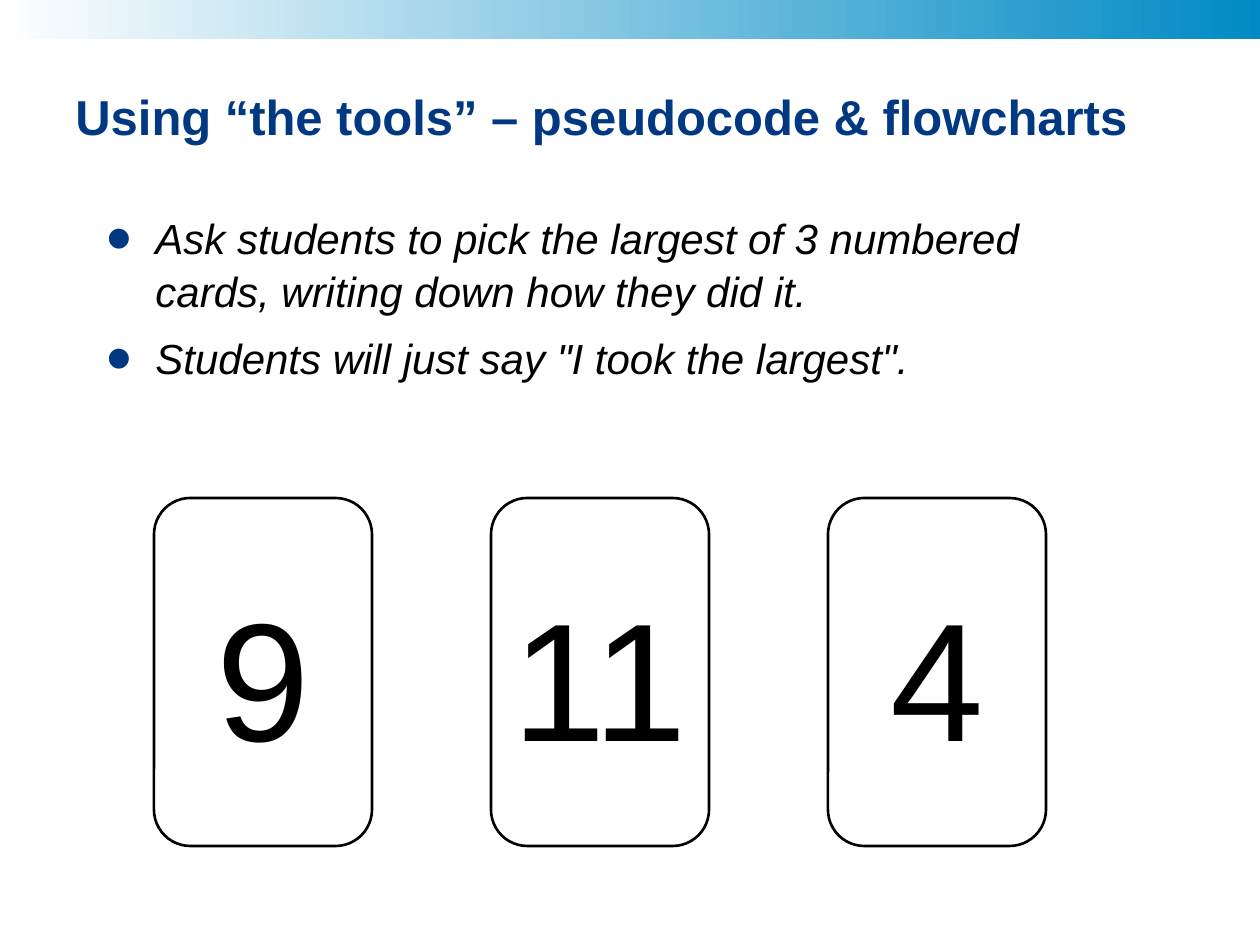
import pptx
import pptx.dml.color
import pptx.enum.shapes
import pptx.enum.text
import pptx.oxml.ns
import pptx.util
from lxml import etree

PX = 914400 / 126
COLOURS = {"white": "FFFFFF", "sky": "008AC4", "navy": "003882", "black": "000000"}
TITLE_FONT = {"name": "Arial", "size": pptx.util.Pt(28), "bold": True}
BULLET_FONT = {"name": "Arial", "size": pptx.util.Pt(24), "italic": True}
NUMBER_FONT = {"name": "Arial", "size": pptx.util.Pt(96)}
BULLETS = [
    "Ask students to pick the largest of 3 numbered cards, writing down how they did it.",
    'Students will just say "I took the largest".',
]
CARDS = ["9", "11", "4"]


def colour(name):
    """Return the named colour."""
    return pptx.dml.color.RGBColor.from_string(COLOURS[name])


def emu(*lengths):
    """Turn px lengths into EMU."""
    return [round(length * PX) for length in lengths]


def format_font(font, values, colour_name):
    """Set the font attributes and colour."""
    for key, value in values.items():
        setattr(font, key, value)
    font.color.rgb = colour(colour_name)


def add_text_box(shapes, box):
    """Add an empty wrapping text box and return its frame."""
    frame = shapes.add_textbox(*emu(*box)).text_frame
    frame.word_wrap = True
    return frame


def add_band(page, box):
    """Draw the gradient band."""
    band = page.shapes.add_shape(pptx.enum.shapes.MSO_SHAPE.RECTANGLE, *emu(*box))
    band.shadow.inherit = False
    band.line.fill.background()
    band.fill.gradient()
    band.fill.gradient_angle = 0
    for stop, name in zip(band.fill.gradient_stops, ("white", "sky")):
        stop.color.rgb = colour(name)


def add_title(page, box):
    """Write the slide title."""
    frame = add_text_box(page.shapes, box)
    frame.vertical_anchor = pptx.enum.text.MSO_ANCHOR.MIDDLE
    para = frame.paragraphs[0]
    para.text = "Using “the tools” – pseudocode & flowcharts"
    format_font(para.font, TITLE_FONT, "navy")


def add_bullet(para):
    """Give the paragraph a large navy bullet and a hanging indent."""
    properties = para._p.get_or_add_pPr()
    indent = emu(49)[0]
    properties.set("marL", str(indent))
    properties.set("indent", str(-indent))
    tag = pptx.oxml.ns.qn
    bullet_colour = etree.SubElement(properties, tag("a:buClr"))
    etree.SubElement(bullet_colour, tag("a:srgbClr"), val=COLOURS["navy"])
    etree.SubElement(properties, tag("a:buSzPct"), val="175000")
    etree.SubElement(properties, tag("a:buFont"), typeface="Arial")
    etree.SubElement(properties, tag("a:buChar"), char="•")


def add_bullets(page, box):
    """Write the bulleted instructions."""
    frame = add_text_box(page.shapes, box)
    for index, text in enumerate(BULLETS):
        para = frame.add_paragraph() if index else frame.paragraphs[0]
        para.text = text
        add_bullet(para)
        para.line_spacing = 1.05
        para.space_before = pptx.util.Pt(8 if index else 0)
        format_font(para.font, BULLET_FONT, "black")


def add_card(page, box, number):
    """Draw one numbered card as a group."""
    left, top, width, height = box
    group = page.shapes.add_group_shape()
    card = group.shapes.add_shape(
        pptx.enum.shapes.MSO_SHAPE.ROUNDED_RECTANGLE, *emu(*box))
    card.shadow.inherit = False
    card.fill.background()
    card.line.color.rgb = colour("black")
    card.line.width = pptx.util.Pt(1.5)
    frame = add_text_box(group.shapes, (left + 5, top + 69, width - 10, 217))
    frame.word_wrap = False
    para = frame.paragraphs[0]
    para.text = number
    para.alignment = pptx.enum.text.PP_ALIGN.CENTER
    format_font(para.font, NUMBER_FONT, "black")


def add_cards(page, box):
    """Spread the cards evenly over the box."""
    left, top, width, height = box
    card_width = 218
    pitch = (width - card_width) / (len(CARDS) - 1)
    for index, number in enumerate(CARDS):
        add_card(page, (left + index * pitch, top, card_width, height), number)


def main():
    """Build the slide and save the deck."""
    deck = pptx.Presentation()
    deck.slide_width, deck.slide_height = emu(1260, 945)
    page = deck.slides.add_slide(deck.slide_layouts[6])
    add_band(page, (0, 0, 1260, 39))
    add_title(page, (63, 76, 1143, 79))
    add_cards(page, (154, 498, 892, 348))
    add_bullets(page, (94, 204, 1052, 228))
    deck.save("out.pptx")


if __name__ == "__main__":
    main()
